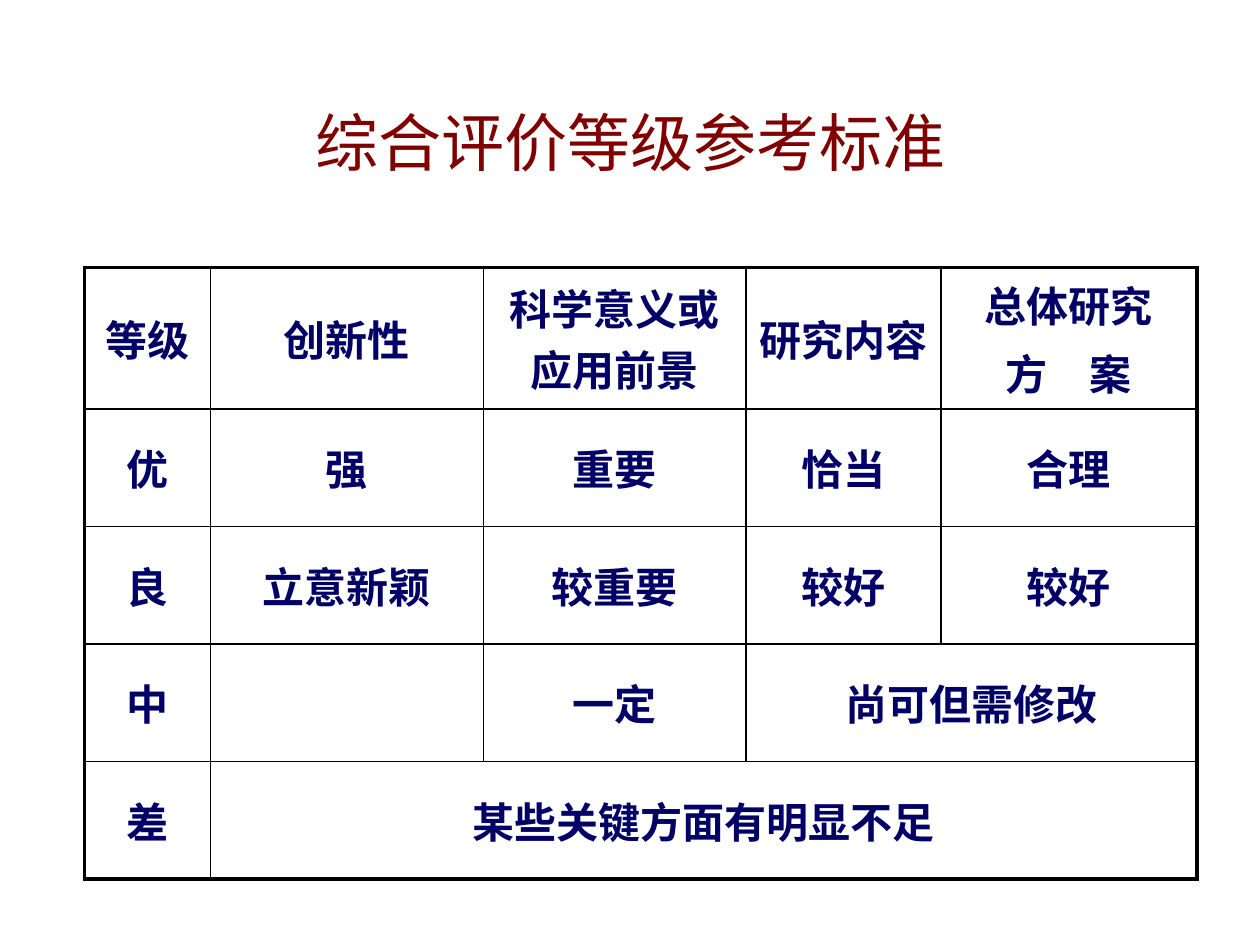
"""Build a slide with a table of grading standards."""
from typing import NamedTuple

from lxml.etree import SubElement
from pptx import Presentation
from pptx.dml.color import RGBColor
from pptx.enum.text import MSO_ANCHOR as Anchor, PP_ALIGN as Align
from pptx.oxml.ns import qn
from pptx.util import Pt

INK, RED, BLACK = "000066", "800000", "000000"
THIN, THICK = 1, 2.25
WIDTHS = [72, 156, 150, 111.5, 146.25]
ROW = 67.2


class Entry(NamedTuple):
    """Hold the text of a cell and the columns it spans."""
    text: str
    span: int = 1


GRID = [
    [Entry("等级"), Entry("创新性"), Entry("科学意义或应用前景"),
     Entry("研究内容"), Entry("总体研究\n方　案")],
    [Entry("优"), Entry("强"), Entry("重要"), Entry("恰当"), Entry("合理")],
    [Entry("良"), Entry("立意新颖"), Entry("较重要"), Entry("较好"), Entry("较好")],
    [Entry("中"), Entry(""), Entry("一定"), Entry("尚可但需修改", 2)],
    [Entry("差"), Entry("某些关键方面有明显不足", 4)],
]


def style(para, face: str, size: float, color: str, bold: bool) -> None:
    """Centre a paragraph and set its font."""
    para.alignment = Align.CENTER
    font = para.font
    font.name, font.size, font.bold = face, Pt(size), bold
    font.color.rgb = RGBColor.from_string(color)


def border(cell, edges: dict[str, bool]) -> None:
    """Draw the four sides of a cell, thick where they are outer edges."""
    props = cell._tc.get_or_add_tcPr()
    for side, outer in edges.items():
        width = Pt(THICK if outer else THIN)
        line = SubElement(props, qn(f"a:ln{side}"), w=str(width))
        fill = SubElement(line, qn("a:solidFill"))
        SubElement(fill, qn("a:srgbClr"), val=BLACK)


def put(table, row: int, col: int, entry: Entry) -> None:
    """Fill one cell, merged over its span."""
    cell = table.cell(row, col)
    end = col + entry.span - 1
    if entry.span > 1:
        cell.merge(table.cell(row, end))
    for at in range(col, end + 1):
        last = end if at == col else at
        part = table.cell(row, at)
        border(part, {"L": at == 0, "R": last == len(WIDTHS) - 1,
                      "T": row == 0, "B": row == len(GRID) - 1})
        part.fill.background()
    cell.vertical_anchor = Anchor.MIDDLE
    cell.text = entry.text
    for para in cell.text_frame.paragraphs:
        style(para, "Arial", 24, INK, True)
        para.space_before = Pt(4)


def main() -> None:
    """Build and save the slide."""
    deck = Presentation()
    deck.slide_width, deck.slide_height = Pt(720), Pt(540)
    slide = deck.slides.add_slide(deck.slide_layouts[5])

    title = slide.shapes.title
    title.left, title.top, title.width, title.height = Pt(36), Pt(36), Pt(648), Pt(90)
    title.text_frame.text = "综合评价等级参考标准"
    title.text_frame.vertical_anchor = Anchor.MIDDLE
    style(title.text_frame.paragraphs[0], "Calibri", 36, RED, False)

    table = slide.shapes.add_table(
        len(GRID), len(WIDTHS), Pt(48.25), Pt(152.75),
        Pt(sum(WIDTHS)), Pt(ROW * len(GRID))).table
    table.first_row = table.horz_banding = False
    for column, width in zip(table.columns, WIDTHS):
        column.width = Pt(width)
    for row, entries in enumerate(GRID):
        table.rows[row].height = Pt(ROW)
        col = 0
        for entry in entries:
            put(table, row, col, entry)
            col += entry.span
    deck.save("out.pptx")


if __name__ == "__main__":
    main()
